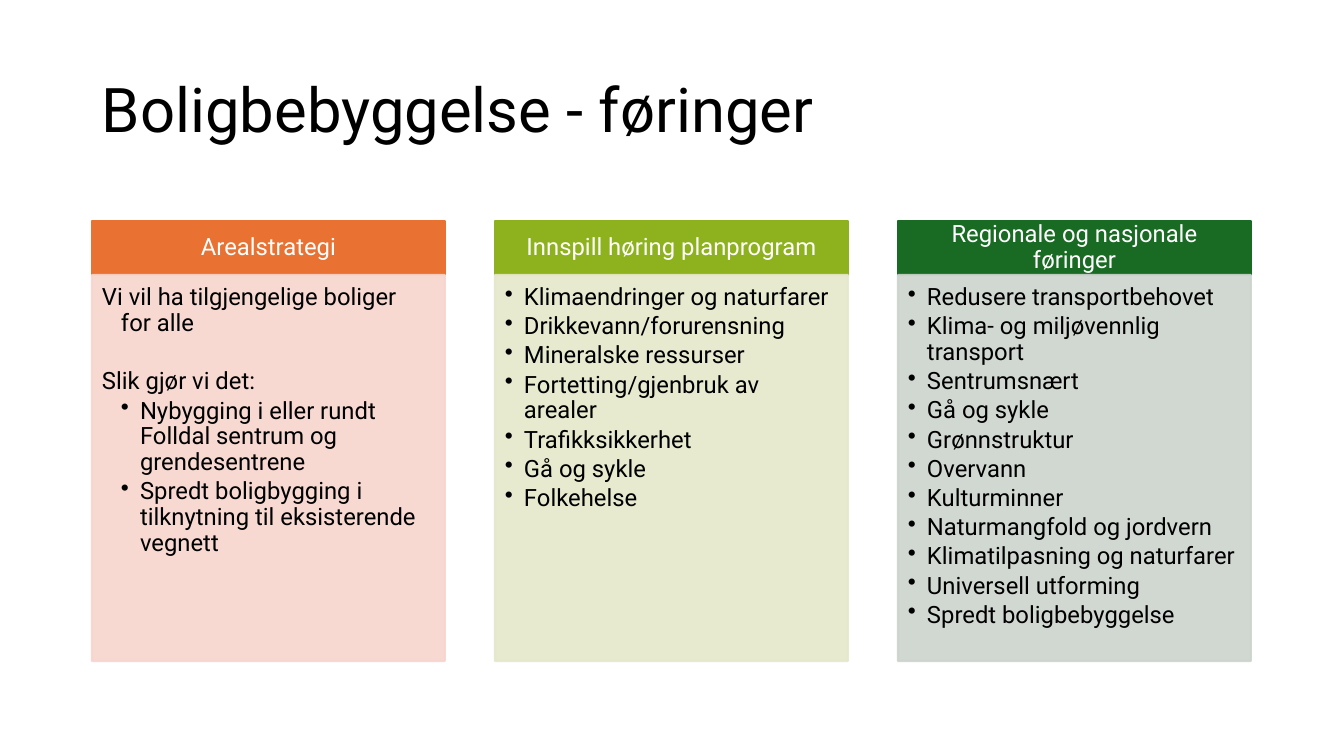
from lxml.etree import SubElement
from pptx import Presentation
from pptx.dml.color import RGBColor
from pptx.enum.shapes import MSO_SHAPE
from pptx.enum.text import MSO_ANCHOR, PP_ALIGN
from pptx.oxml.ns import qn
from pptx.util import Emu, Pt

BLACK = RGBColor(0x00, 0x00, 0x00)
WHITE = RGBColor(0xFF, 0xFF, 0xFF)
ORANGE = RGBColor(0xE9, 0x71, 0x32)
PEACH = RGBColor(0xF7, 0xD5, 0xCE)
LIME = RGBColor(0x8E, 0xB2, 0x1E)
CREAM = RGBColor(0xE5, 0xE8, 0xCA)
GREEN = RGBColor(0x19, 0x6B, 0x24)
GREY = RGBColor(0xCC, 0xD4, 0xCD)

TOP, HEAD, BODY = 221, 54, 386
LEFT, WIDTH, STEP = 92, 353, 403
HANG = 19

COLUMNS = [
    ("Arealstrategi", ORANGE, PEACH, [
        (1, False, 0, "Vi vil ha tilgjengelige boliger for alle"),
        (1, False, 21, "Slik gjør vi det:"),
        (2, True, 0, "Nybygging i eller rundt Folldal sentrum og grendesentrene"),
        (2, True, 0, "Spredt boligbygging i tilknytning til eksisterende vegnett"),
    ]),
    ("Innspill høring planprogram", LIME, CREAM, [(1, True, 0, text) for text in (
        "Klimaendringer og naturfarer",
        "Drikkevann/forurensning",
        "Mineralske ressurser",
        "Fortetting/gjenbruk av arealer",
        "Trafikksikkerhet",
        "Gå og sykle",
        "Folkehelse",
    )]),
    ("Regionale og nasjonale føringer", GREEN, GREY, [(1, True, 0, text) for text in (
        "Redusere transportbehovet",
        "Klima- og miljøvennlig transport",
        "Sentrumsnært",
        "Gå og sykle",
        "Grønnstruktur",
        "Overvann",
        "Kulturminner",
        "Naturmangfold og jordvern",
        "Klimatilpasning og naturfarer",
        "Universell utforming",
        "Spredt boligbebyggelse",
    )]),
]


def px(count):
    return Emu(round(count * 914400 / 100.8))


def apply(target, values):
    for name, value in values.items():
        setattr(target, name, value)


class Painter:
    """Draws styled elements on the current slide."""

    font = "Roboto"

    def __init__(self, slide):
        self.slide = slide

    def frame(self, shape, anchor, insets):
        sides = ("margin_left", "margin_top", "margin_right", "margin_bottom")
        frame = shape.text_frame
        apply(frame, {"word_wrap": True, "vertical_anchor": anchor})
        apply(frame, dict(zip(sides, map(px, insets))))
        return frame

    def label(self, para, text, size, color, form):
        para.text = text
        apply(para, {"line_spacing": 0.9, **form})
        apply(para.font, {"name": self.font, "size": Pt(size)})
        para.font.color.rgb = color

    def title(self, text):
        box = self.slide.shapes.add_textbox(px(LEFT), px(40), px(1159), px(146))
        frame = self.frame(box, MSO_ANCHOR.MIDDLE, (10, 5, 10, 5))
        self.label(frame.paragraphs[0], text, 44, BLACK, {})

    def panel(self, left, top, height, color, alpha=100):
        shape = self.slide.shapes.add_shape(
            MSO_SHAPE.RECTANGLE, px(left), px(top), px(WIDTH), px(height))
        shape.shadow.inherit = False
        shape.fill.solid()
        shape.fill.fore_color.rgb = color
        shape.line.color.rgb = color
        shape.line.width = Pt(1.5)
        if alpha < 100:
            for tint in shape._element.spPr.iter(qn("a:srgbClr")):
                SubElement(tint, qn("a:alpha")).set("val", str(alpha * 1000))
        return shape

    def header(self, left, text, color):
        shape = self.panel(left, TOP, HEAD, color)
        frame = self.frame(shape, MSO_ANCHOR.MIDDLE, (13, 8, 13, 8))
        self.label(frame.paragraphs[0], text, 17, WHITE, {"alignment": PP_ALIGN.CENTER})

    def points(self, left, items, color):
        shape = self.panel(left, TOP + HEAD, BODY, color, 90)
        frame = self.frame(shape, MSO_ANCHOR.TOP, (10, 10, 13, 15))
        for index, (level, dot, before, text) in enumerate(items):
            para = frame.add_paragraph() if index else frame.paragraphs[0]
            props = para._p.get_or_add_pPr()
            props.set("marL", str(px(HANG * level)))
            props.set("indent", str(-px(HANG)))
            if dot:
                SubElement(props, qn("a:buChar")).set("char", "•")
            self.label(para, text, 17, BLACK, {
                "alignment": PP_ALIGN.LEFT,
                "level": level,
                "space_before": Pt(before),
                "space_after": Pt(2.5),
            })


def main():
    deck = Presentation()
    apply(deck, {"slide_width": px(1344), "slide_height": px(756)})
    paint = Painter(deck.slides.add_slide(deck.slide_layouts[6]))
    paint.title("Boligbebyggelse - føringer")
    for index, (name, dark, pale, items) in enumerate(COLUMNS):
        left = LEFT + STEP * index
        paint.header(left, name, dark)
        paint.points(left, items, pale)
    deck.save("out.pptx")


if __name__ == "__main__":
    main()
